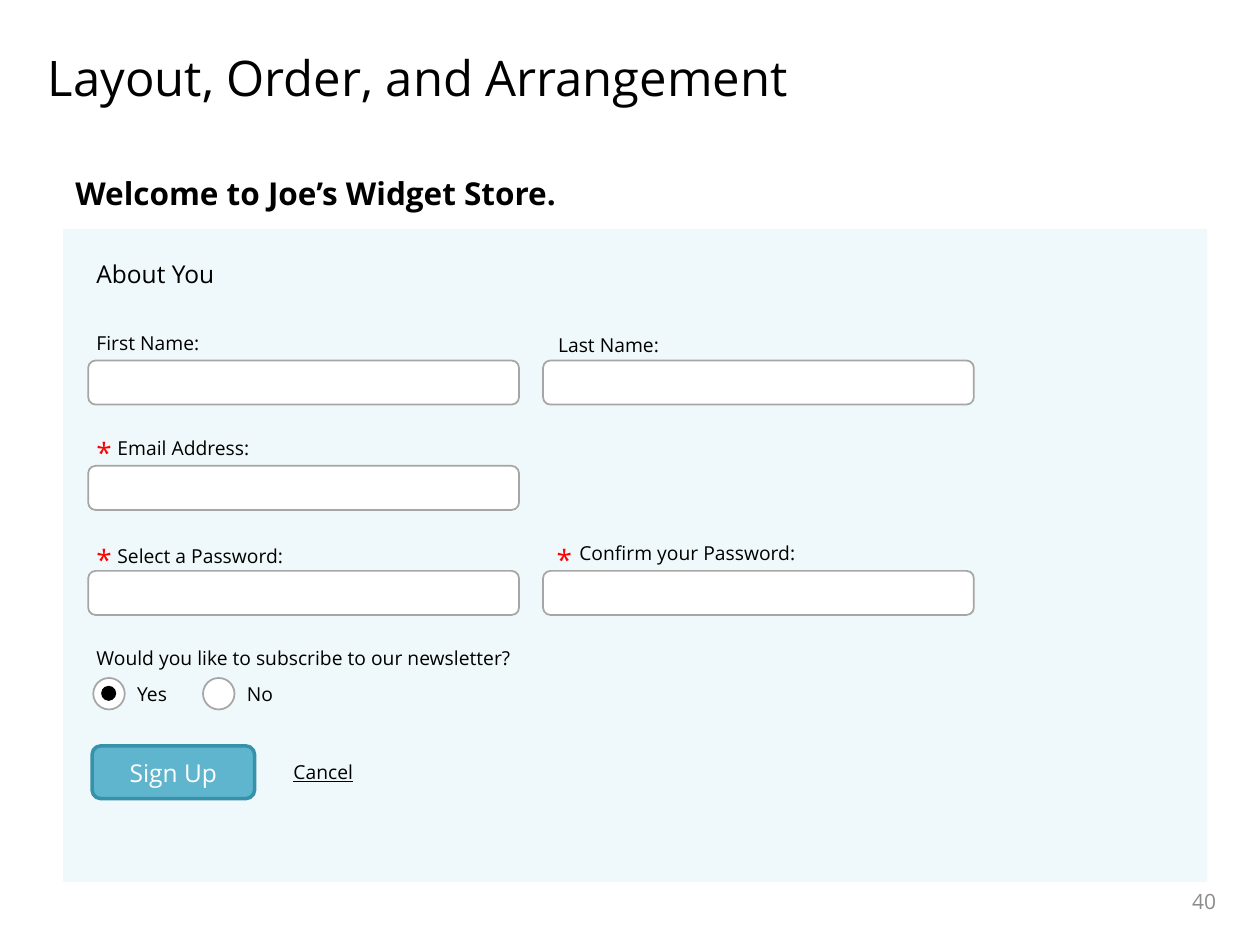
"""Build the sign-up form slide on layout, order, and arrangement."""
from pptx import Presentation
from pptx.dml.color import RGBColor
from pptx.enum.shapes import MSO_SHAPE
from pptx.enum.text import MSO_ANCHOR, MSO_AUTO_SIZE, PP_ALIGN
from pptx.util import Pt

HUES = {
    "ink": "000000",
    "white": "FFFFFF",
    "panel": "EFF8FA",
    "edge": "A6A6A6",
    "button": "5FB5CD",
    "rim": "3692AB",
    "star": "FF0000",
    "page": "8C8C8C",
}


def write(text, box=None, at=None, size=11, hue="ink", bold=False,
          under=False, align=PP_ALIGN.LEFT, anchor=MSO_ANCHOR.TOP):
    if box is None:
        box = slide.shapes.add_textbox(*map(Pt, at))
    frame = box.text_frame
    frame.word_wrap = True
    frame.auto_size = MSO_AUTO_SIZE.NONE
    frame.vertical_anchor = anchor
    frame.text = text
    para = frame.paragraphs[0]
    para.alignment = align
    font = para.runs[0].font
    font.name, font.size = "Open Sans", Pt(size)
    font.bold, font.underline = bold, under
    font.color.rgb = RGBColor.from_string(HUES[hue])


def draw(kind, at, fill, line=None, width=1):
    shape = slide.shapes.add_shape(kind, *map(Pt, at))
    shape.shadow.inherit = False
    shape.fill.solid()
    shape.fill.fore_color.rgb = RGBColor.from_string(HUES[fill])
    if line:
        shape.line.color.rgb = RGBColor.from_string(HUES[line])
        shape.line.width = Pt(width)
    else:
        shape.line.fill.background()
    return shape


deck = Presentation()
deck.slide_width, deck.slide_height = Pt(720), Pt(540)
slide = deck.slides.add_slide(deck.slide_layouts[5])

title = slide.shapes.title
title.left, title.top, title.width, title.height = map(Pt, (20.2, 23.8, 681.8, 77.8))
write("Layout, Order, and Arrangement", box=title, size=28)
write("40", at=(534.2, 500.4, 167.8, 28.8), size=12, hue="page",
      align=PP_ALIGN.RIGHT, anchor=MSO_ANCHOR.MIDDLE)

draw(MSO_SHAPE.RECTANGLE, (36, 131, 653.8, 373), "panel")
write("Welcome to Joe’s Widget Store.", at=(36, 95.8, 414, 29), size=18, bold=True)
write("About You", at=(48, 144.7, 414, 24.5), size=14)

left, right = 50.4, 310.3
for x, y in ((left, 206), (right, 206), (left, 266.2), (left, 326.2), (right, 326.2)):
    draw(MSO_SHAPE.ROUNDED_RECTANGLE, (x, y, 246.2, 25.2), "white", "edge")

labels = (
    ("First Name:", 48, 185.6, 132),
    ("Last Name:", 311.8, 186.7, 132),
    ("Email Address:", 60, 246, 132),
    ("Select a Password:", 60, 307.4, 132),
    ("Confirm your Password:", 324, 306, 180),
    ("Would you like to subscribe to our newsletter?", 48, 365.8, 300),
)
for text, x, y, wide in labels:
    write(text, at=(x, y, wide, 20.9))

for x, y in ((48, 245.5), (48, 306.7), (311, 306.7)):
    write("*", at=(x, y, 19.4, 26.6), size=16, hue="star")

for text, x in (("Yes", 53.3), ("No", 116)):
    draw(MSO_SHAPE.OVAL, (x, 387.4, 18, 18), "white", "edge")
    write(text, at=(x + 18, 386.6, 33.1, 20.9))
draw(MSO_SHAPE.OVAL, (57.8, 391.9, 8.6, 8.6), "ink")

button = draw(MSO_SHAPE.ROUNDED_RECTANGLE, (52.6, 426.2, 92.9, 30.2),
              "button", "rim", 2)
write("Sign Up", box=button, size=14, hue="white",
      align=PP_ALIGN.CENTER, anchor=MSO_ANCHOR.MIDDLE)
write("Cancel", at=(160.6, 430.6, 55.4, 20.9), under=True)

deck.save("out.pptx")
